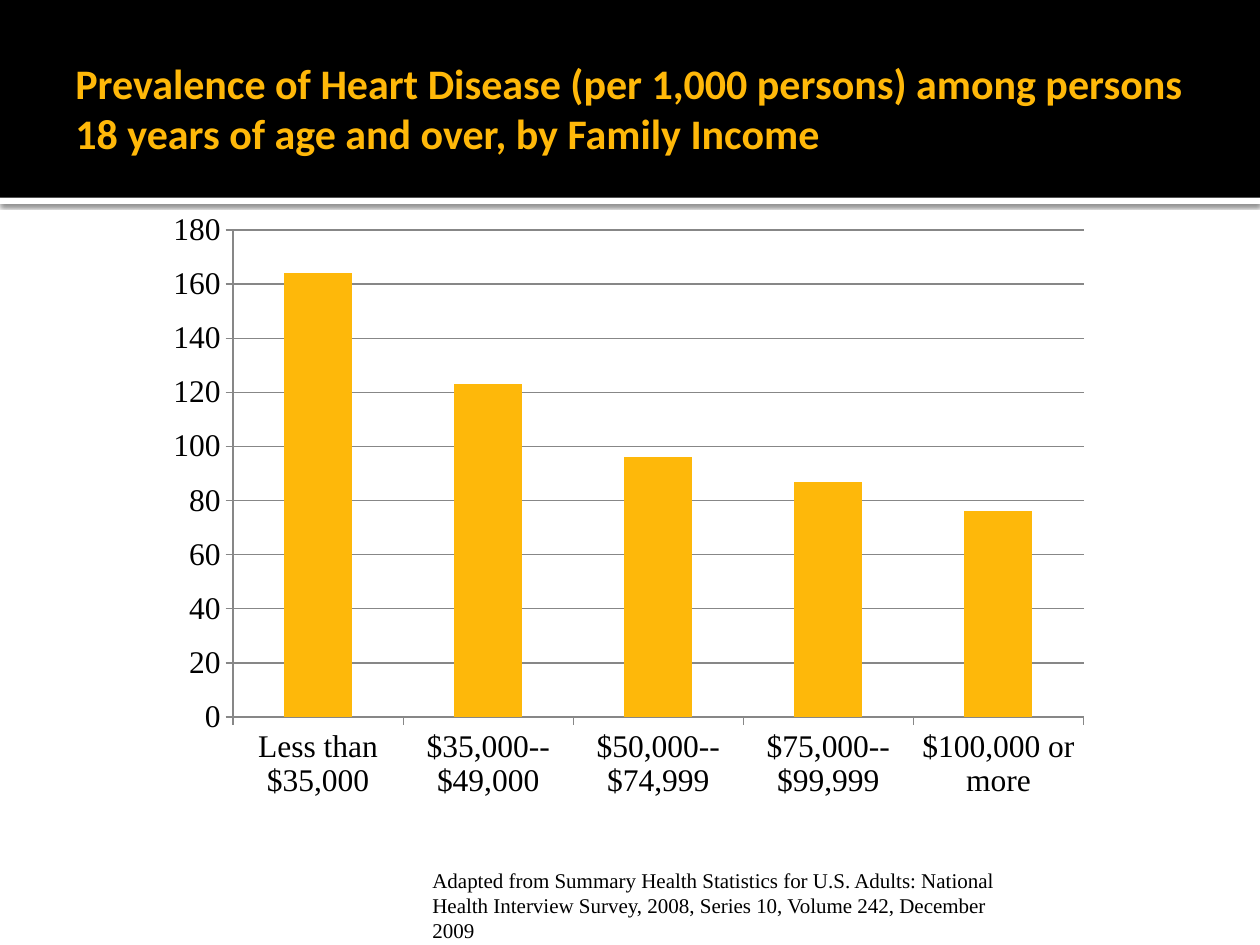
import pptx
import pptx.chart.data
import pptx.dml.color
import pptx.enum.chart
import pptx.enum.shapes
import pptx.enum.text
import pptx.oxml
import pptx.oxml.ns
import pptx.util

Pt = pptx.util.Pt

TITLE = ("Prevalence of Heart Disease (per 1,000 persons) among persons "
         "18 years of age and over, by Family Income")
SOURCE = ("Adapted from Summary Health Statistics for U.S. Adults: National "
          "Health Interview Survey, 2008, Series 10, Volume 242, December 2009")
PREVALENCE = {
    "Less than $35,000": 164,
    "$35,000--$49,000": 123,
    "$50,000--$74,999": 96,
    "$75,000--$99,999": 87,
    "$100,000 or more": 76,
}
COLORS = {"white": "FFFFFF", "black": "000000", "title": "FFB809",
          "bar": "FEB80A", "line": "878787"}
HEAD_FONT, BODY_FONT = "Calibri", "Times New Roman"
WIDTH, HEIGHT, BAND_HEIGHT = 720, 540, 113
PLOT = {"x": 0.08, "y": 0.05, "w": 0.9, "h": 0.8}


def rgb(name):
    return pptx.dml.color.RGBColor.from_string(COLORS[name])


def style_font(font, name, size, color, bold=False):
    font.name, font.size, font.bold = name, Pt(size), bold
    font.color.rgb = rgb(color)


def add_bar(slide, top, height, color):
    sp = slide.shapes.add_shape(pptx.enum.shapes.MSO_SHAPE.RECTANGLE,
                                0, Pt(top), Pt(WIDTH), Pt(height))
    sp.shadow.inherit = False
    sp.fill.solid()
    sp.fill.fore_color.rgb = rgb(color)
    sp.line.fill.background()
    return sp


def add_shadow(sp):
    effects = sp._element.spPr.find(pptx.oxml.ns.qn("a:effectLst"))
    effects.append(pptx.oxml.parse_xml(
        f'<a:outerShdw {pptx.oxml.ns.nsdecls("a")} blurRad="{Pt(2.5)}" '
        f'dist="{Pt(0.8)}" dir="5400000" algn="tl" rotWithShape="0">'
        f'<a:srgbClr val="{COLORS["black"]}"><a:alpha val="60000"/></a:srgbClr>'
        '</a:outerShdw>'))


def add_text(slide, text, box, font, size, color, bold=False):
    sp = slide.shapes.add_textbox(*map(Pt, box))
    tf = sp.text_frame
    tf.word_wrap = True
    tf.text = text
    style_font(tf.paragraphs[0].runs[0].font, font, size, color, bold)
    return tf


def add_income_chart(slide, box):
    data = pptx.chart.data.CategoryChartData()
    data.categories = list(PREVALENCE)
    data.add_series("Series 1", list(PREVALENCE.values()))
    chart = slide.shapes.add_chart(
        pptx.enum.chart.XL_CHART_TYPE.COLUMN_STACKED, *map(Pt, box), data).chart
    chart.has_legend = chart.has_title = False
    style_font(chart.font, BODY_FONT, 18, "black")

    plot = chart.plots[0]
    plot.gap_width, plot.overlap, plot.vary_by_categories = 150, 100, False
    fill = plot.series[0].format.fill
    fill.solid()
    fill.fore_color.rgb = rgb("bar")

    values = chart.value_axis
    values.minimum_scale, values.maximum_scale, values.major_unit = 0, 180, 20
    values.has_major_gridlines = True
    for axis in (chart.category_axis, values):
        axis.major_tick_mark = pptx.enum.chart.XL_TICK_MARK.OUTSIDE
    for part in (chart.category_axis, values, values.major_gridlines):
        part.format.line.color.rgb = rgb("line")
        part.format.line.width = Pt(0.75)

    area = chart._chartSpace.chart.plotArea
    for old in area.findall(pptx.oxml.ns.qn("c:layout")):
        area.remove(old)
    sizes = "".join(f'<c:{k} val="{v}"/>' for k, v in PLOT.items())
    area.insert(0, pptx.oxml.parse_xml(
        f'<c:layout {pptx.oxml.ns.nsdecls("c")}><c:manualLayout>'
        '<c:layoutTarget val="inner"/><c:xMode val="edge"/><c:yMode val="edge"/>'
        f'{sizes}</c:manualLayout></c:layout>'))


def main():
    prs = pptx.Presentation()
    prs.slide_width, prs.slide_height = Pt(WIDTH), Pt(HEIGHT)
    slide = prs.slides.add_slide(prs.slide_layouts[6])

    add_shadow(add_bar(slide, BAND_HEIGHT, 3.6, "white"))
    add_bar(slide, 0, BAND_HEIGHT, "black")

    tf = add_text(slide, TITLE, (36, 12.4, 648, 98.6), HEAD_FONT, 24, "title", True)
    tf.vertical_anchor = pptx.enum.text.MSO_ANCHOR.MIDDLE
    tf.margin_right = Pt(3.6)
    add_text(slide, SOURCE, (240, 492, 354, 51), BODY_FONT, 12, "black")
    add_income_chart(slide, (90, 114, 540, 348))

    prs.save("out.pptx")


if __name__ == "__main__":
    main()
